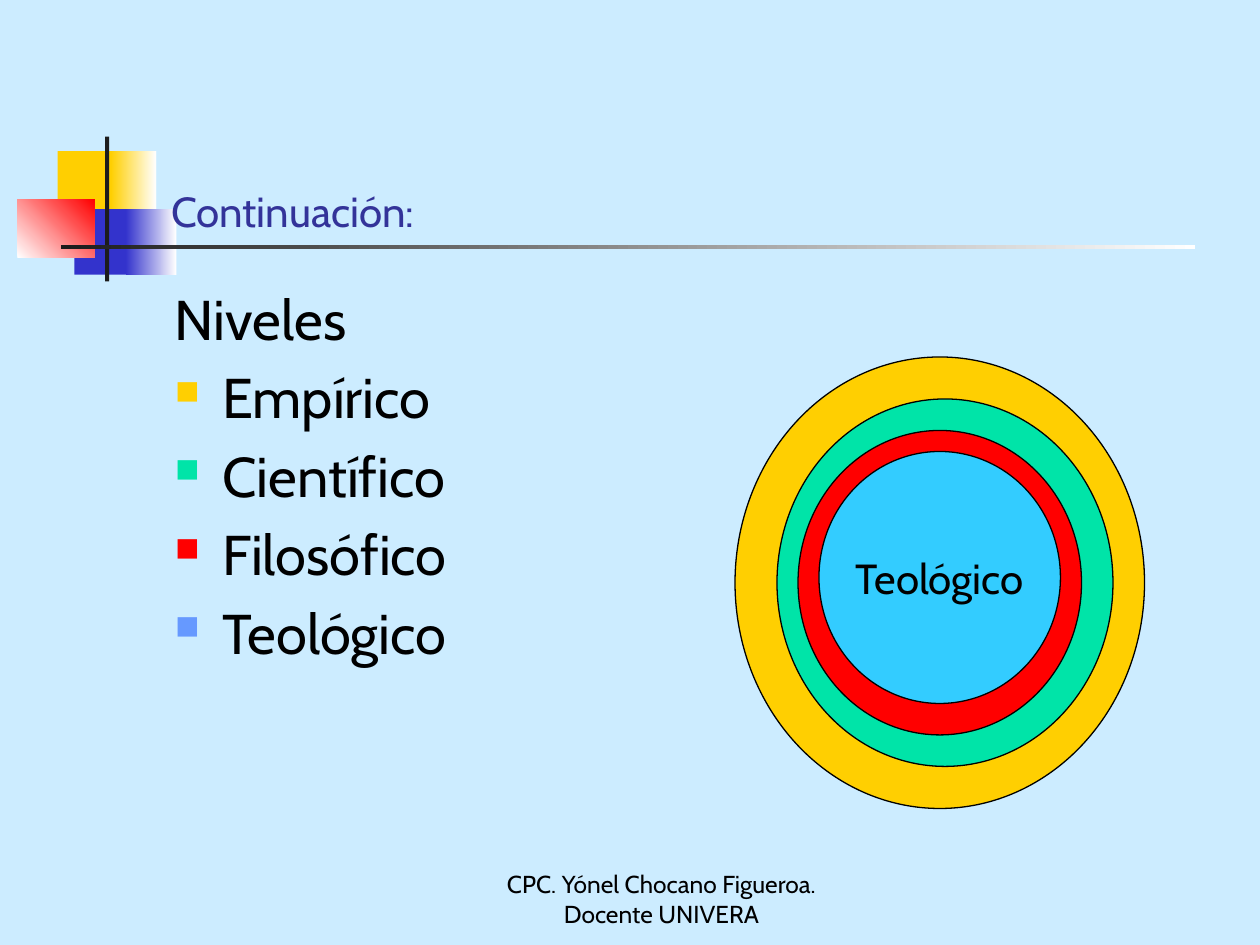
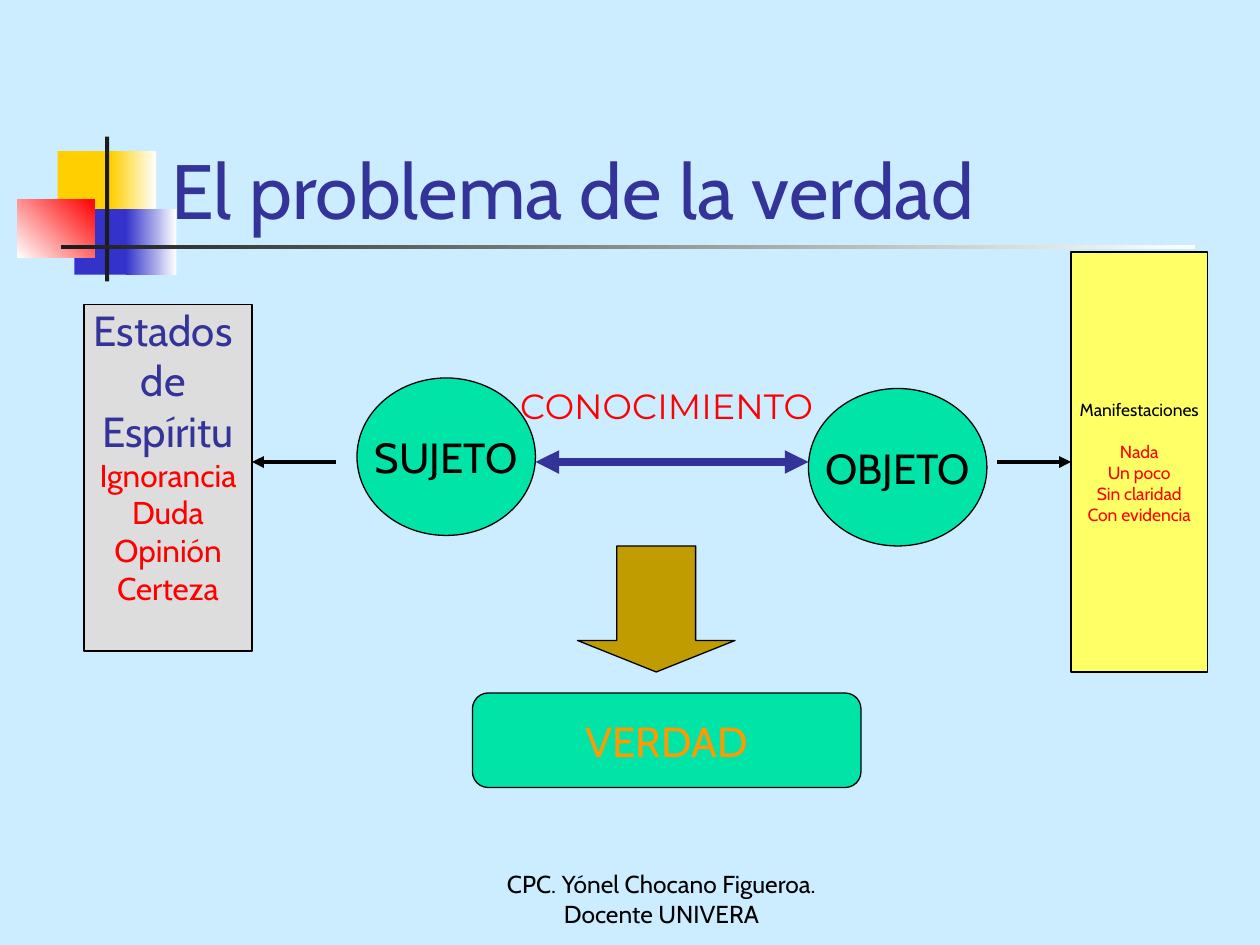
from dataclasses import dataclass
from typing import Any, NamedTuple

import lxml.etree
import pptx
import pptx.dml.color
import pptx.enum.shapes
import pptx.enum.text
import pptx.oxml.ns
import pptx.util

Pt = pptx.util.Pt
qn = pptx.oxml.ns.qn
PRESET = pptx.enum.shapes.MSO_SHAPE
ANCHOR = pptx.enum.text.MSO_ANCHOR
ALIGN = pptx.enum.text.PP_ALIGN

COLORS = {
    "background": "CCECFF", "black": "000000", "white": "FFFFFF",
    "charcoal": "1C1C1C", "navy": "333399", "blue": "3333CC",
    "gold": "FFCF01", "green": "00E4A8", "red": "FF0000",
    "periwinkle": "6699FF", "sky": "33CCFF", "olive": "C09C00",
    "orange": "FF9900", "gray": "DDDDDD", "yellow": "FFFF66",
}
BODY_FONT = "Cabin"
LABEL_FONT = "Montserrat"
FOOTER = "CPC. Yónel Chocano Figueroa. Docente UNIVERA"


class Box(NamedTuple):
    left: float
    top: float
    width: float
    height: float


@dataclass
class Line:
    """One paragraph of text."""
    text: str
    size: float
    color: str = "black"
    font: str = BODY_FONT
    align: Any = ALIGN.CENTER
    before: float = 0
    after: float = 0
    indent: float = 0
    bullet: str = ""


@dataclass
class Figure:
    """A preset shape; fade_to turns its fill into a gradient."""
    preset: Any
    box: Box
    fill: str
    lines: tuple[Line, ...] = ()
    fade_to: str = ""
    angle: float = 0
    outlined: bool = True
    anchor: Any = ANCHOR.MIDDLE
    top_inset: float = 3.6


@dataclass
class Arrow:
    start: float
    end: float
    color: str
    width: float
    ends: tuple[str, ...] = ("tailEnd",)


def band(box: Box, fill: str, fade_to: str = "", angle: float = 0) -> Figure:
    return Figure(PRESET.RECTANGLE, box, fill, fade_to=fade_to, angle=angle, outlined=False)


# Decoration shared by every slide
BANDS = (
    band(Box(33, 86.4, 34.6, 37.4), "gold"),
    band(Box(63.4, 86.4, 25.9, 37.4), "gold", "white"),
    band(Box(42.5, 119.5, 33.1, 37.4), "blue"),
    band(Box(72, 119.5, 28.8, 37.4), "blue", "white"),
    band(Box(10, 113.8, 44, 33.4), "white", "red", 45),
    band(Box(60, 78, 2.4, 82.8), "charcoal"),
    band(Box(34.8, 140, 648, 2.6), "charcoal", "white"),
)


def rgb(name: str) -> pptx.dml.color.RGBColor:
    return pptx.dml.color.RGBColor.from_string(COLORS[name])


def apply_format(target: Any, values: dict[str, Any]) -> None:
    for name, value in values.items():
        setattr(target, name, value)


def add_bullet(paragraph: Any, color: str) -> None:
    properties = paragraph._p.get_or_add_pPr()
    bullet_color = lxml.etree.SubElement(properties, qn("a:buClr"))
    lxml.etree.SubElement(bullet_color, qn("a:srgbClr"), val=COLORS[color])
    lxml.etree.SubElement(properties, qn("a:buSzPct"), val="60000")
    lxml.etree.SubElement(properties, qn("a:buChar"), char="■")


def write_lines(frame: Any, lines: tuple[Line, ...]) -> None:
    for index, line in enumerate(lines):
        paragraph = frame.add_paragraph() if index else frame.paragraphs[0]
        apply_format(paragraph, {
            "alignment": line.align,
            "space_before": Pt(line.before),
            "space_after": Pt(line.after),
        })
        run = paragraph.add_run()
        run.text = line.text
        apply_format(run.font, {"name": line.font, "size": Pt(line.size)})
        run.font.color.rgb = rgb(line.color)
        if line.indent:
            properties = paragraph._p.get_or_add_pPr()
            properties.set("marL", str(Pt(line.indent)))
            properties.set("indent", str(-Pt(line.indent)))
        if line.bullet:
            add_bullet(paragraph, line.bullet)


def add_text(slide: Any, box: Box, lines: tuple[Line, ...],
             anchor: Any = ANCHOR.TOP) -> None:
    frame = slide.shapes.add_textbox(*map(Pt, box)).text_frame
    apply_format(frame, {"word_wrap": True, "vertical_anchor": anchor})
    write_lines(frame, lines)


def add_figure(slide: Any, figure: Figure) -> None:
    shape = slide.shapes.add_shape(figure.preset, *map(Pt, figure.box))
    shape.shadow.inherit = False
    if figure.fade_to:
        shape.fill.gradient()
        shape.fill.gradient_angle = figure.angle
        for stop, name in zip(shape.fill.gradient_stops, (figure.fill, figure.fade_to)):
            stop.color.rgb = rgb(name)
    else:
        shape.fill.solid()
        shape.fill.fore_color.rgb = rgb(figure.fill)
    if figure.outlined:
        shape.line.color.rgb = rgb("black")
        shape.line.width = Pt(0.75)
    else:
        shape.line.fill.background()
    if figure.preset == PRESET.DOWN_ARROW:
        shape.adjustments[1] = 0.25
    if figure.lines:
        apply_format(shape.text_frame, {
            "word_wrap": False,
            "vertical_anchor": figure.anchor,
            "margin_top": Pt(figure.top_inset),
        })
        write_lines(shape.text_frame, figure.lines)


def add_arrow(slide: Any, arrow: Arrow, height: float) -> None:
    connector = slide.shapes.add_connector(
        pptx.enum.shapes.MSO_CONNECTOR.STRAIGHT,
        Pt(arrow.start), Pt(height), Pt(arrow.end), Pt(height))
    connector.line.color.rgb = rgb(arrow.color)
    connector.line.width = Pt(arrow.width)
    properties = connector._element.spPr
    outline = properties.find(qn("a:ln"))
    for end in arrow.ends:
        lxml.etree.SubElement(outline, qn(f"a:{end}"), type="triangle")
    lxml.etree.SubElement(properties, qn("a:effectLst"))


def start_slide(presentation: Any, title: str, title_size: float, title_box: Box) -> Any:
    slide = presentation.slides.add_slide(presentation.slide_layouts[6])
    slide.background.fill.solid()
    slide.background.fill.fore_color.rgb = rgb("background")
    for figure in BANDS:
        add_figure(slide, figure)
    add_text(slide, Box(264, 498, 228, 36), (Line(FOOTER, 14),), ANCHOR.BOTTOM)
    add_text(slide, title_box,
             (Line(title, title_size, "navy", align=ALIGN.LEFT),), ANCHOR.BOTTOM)
    return slide


def build_levels(presentation: Any) -> None:
    slide = start_slide(presentation, "Continuación:", 24, Box(90.7, 107.5, 613.4, 31))

    # Bulleted levels
    levels = (("Niveles", ""), ("Empírico", "gold"), ("Científico", "green"),
              ("Filosófico", "red"), ("Teológico", "periwinkle"))
    add_text(slide, Box(92.9, 159, 612, 324), tuple(
        Line(text, 32, align=ALIGN.LEFT, before=6.4, indent=27, bullet=bullet)
        for text, bullet in levels))

    # Nested levels, outermost first
    rings = (
        (Box(420, 204, 234, 258), "gold", ()),
        (Box(444, 228, 192, 210), "green", ()),
        (Box(456, 246, 162, 174), "red", ()),
        (Box(468, 258, 138, 144), "sky", (Line("Teológico", 24),)),
    )
    for box, fill, lines in rings:
        add_figure(slide, Figure(PRESET.OVAL, box, fill, lines))


def build_truth(presentation: Any) -> None:
    slide = start_slide(presentation, "El problema de la verdad", 44,
                        Box(90.7, 84, 613.4, 54))

    # Subject and object
    for text, left, top in (("SUJETO", 204, 216), ("OBJETO", 462, 222)):
        add_figure(slide, Figure(PRESET.OVAL, Box(left, top, 102, 90), "green",
                                 (Line(text, 24),)))
    # The label needs more width than the gap between the ovals
    add_text(slide, Box(281, 216, 200, 32),
             (Line("CONOCIMIENTO", 20, "red", LABEL_FONT),))

    # Arrows on one level
    for arrow in (Arrow(306, 462, "navy", 4.5, ("headEnd", "tailEnd")),
                  Arrow(192, 144, "black", 2.25),
                  Arrow(570, 612, "black", 2.25)):
        add_arrow(slide, arrow, 264)

    # Truth
    add_figure(slide, Figure(PRESET.DOWN_ARROW, Box(330, 312, 90, 72), "olive"))
    add_figure(slide, Figure(PRESET.ROUNDED_RECTANGLE, Box(270, 396, 222, 54), "green",
                             (Line("VERDAD", 24, "orange"),)))

    # Side panels
    states = tuple(Line(text, 24, "navy") for text in ("Estados ", "de ", "Espíritu"))
    states += tuple(Line(text, 18, "red")
                    for text in ("Ignorancia", "Duda", "Opinión", "Certeza"))
    add_figure(slide, Figure(PRESET.RECTANGLE, Box(48, 174, 96, 198), "gray", states,
                             anchor=ANCHOR.TOP, top_inset=0))
    signs = (Line("Manifestaciones", 10, after=12),)
    signs += tuple(Line(text, 10, "red")
                   for text in ("Nada", "Un poco", "Sin claridad", "Con evidencia"))
    add_figure(slide, Figure(PRESET.RECTANGLE, Box(612, 144, 78, 240), "yellow", signs))


def main() -> None:
    presentation = pptx.Presentation()
    apply_format(presentation, {"slide_width": Pt(720), "slide_height": Pt(540)})
    build_levels(presentation)
    build_truth(presentation)
    presentation.save("out.pptx")


if __name__ == "__main__":
    main()
